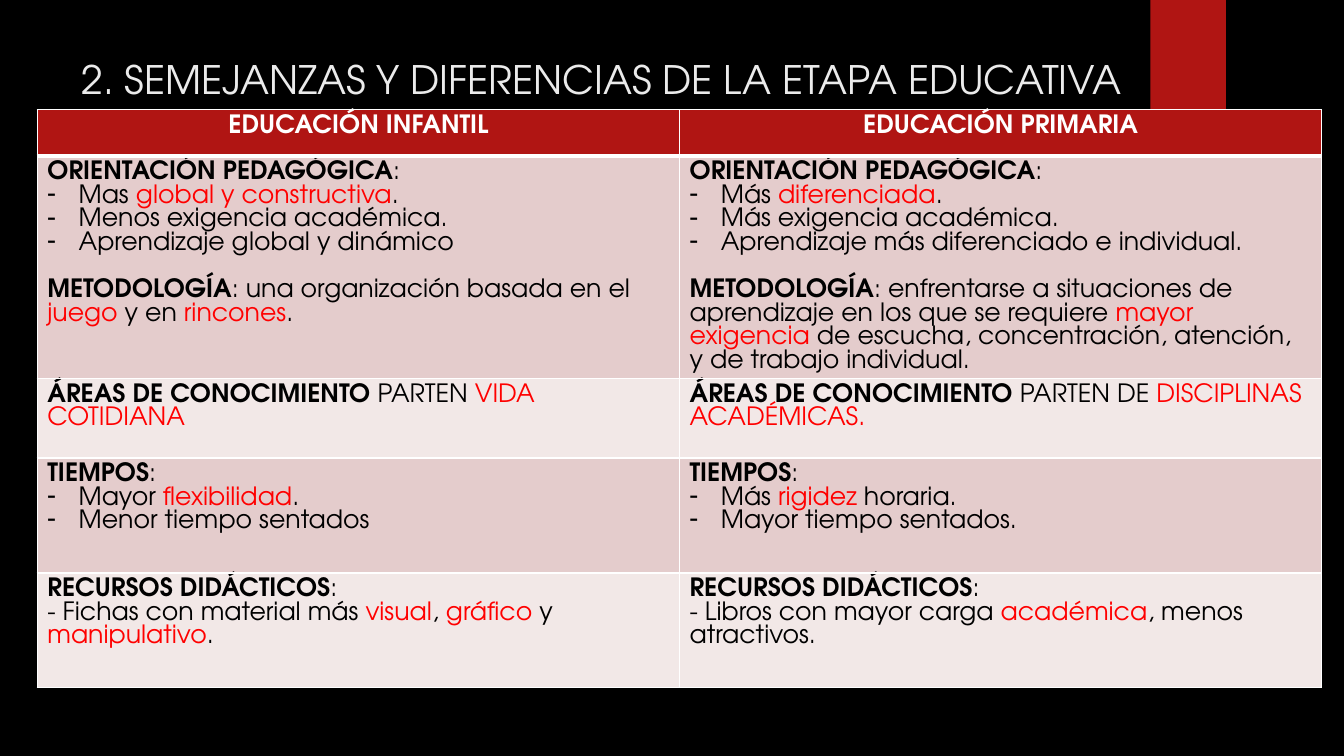
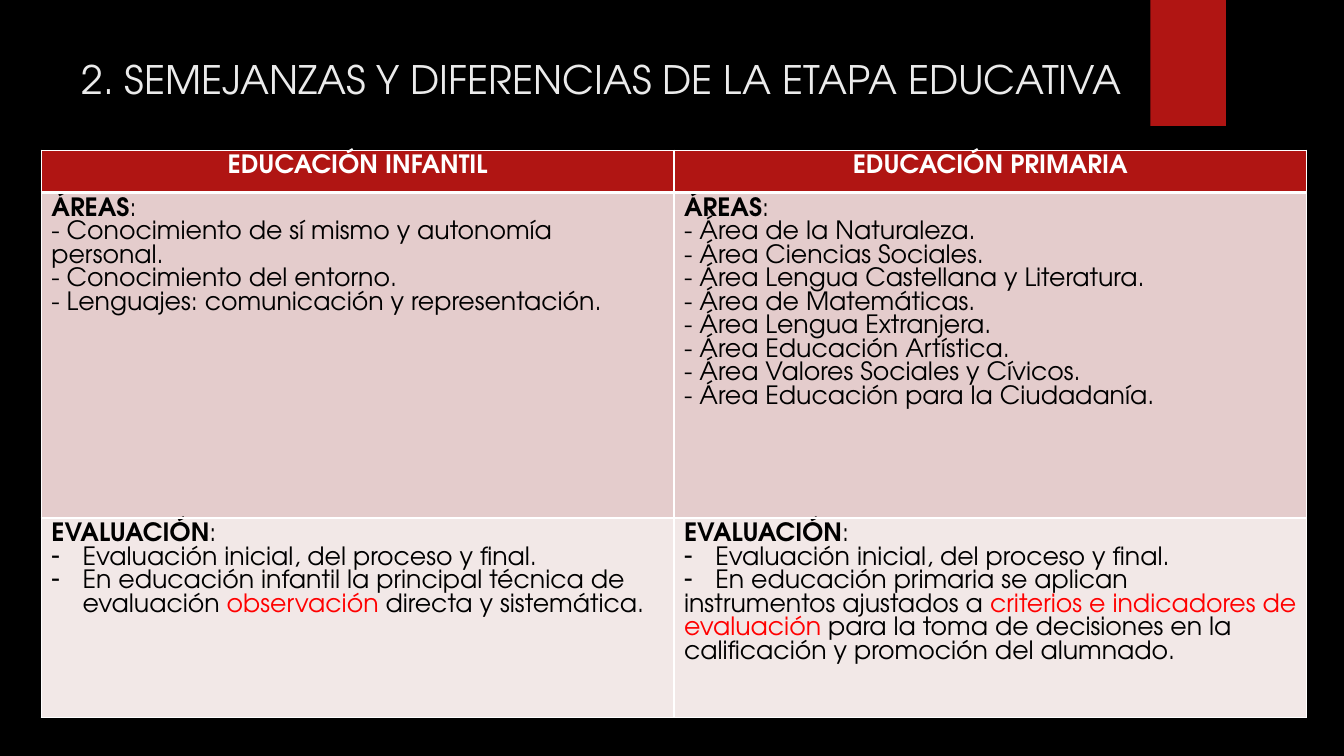
"""Build two slides comparing preschool and primary education."""
from dataclasses import dataclass

from lxml import etree
from pptx import Presentation
from pptx.dml.color import RGBColor as RGB
from pptx.enum.shapes import MSO_SHAPE as SHAPE
from pptx.enum.text import MSO_ANCHOR as ANCHOR, PP_ALIGN as ALIGN
from pptx.oxml.ns import qn
from pptx.util import Inches, Pt


@dataclass(frozen=True)
class Theme:
    """Colours, font and type sizes."""
    font: str = "TeX Gyre Adventor"
    title_size: int = 28
    body_size: int = 18
    background: RGB = RGB(0x00, 0x00, 0x00)
    title: RGB = RGB(0xEB, 0xEB, 0xEB)
    accent: RGB = RGB(0xB0, 0x15, 0x13)
    header_text: RGB = RGB(0xFF, 0xFF, 0xFF)
    text: RGB = RGB(0x00, 0x00, 0x00)
    highlight: RGB = RGB(0xFF, 0x00, 0x00)
    bands: tuple = (RGB(0xE4, 0xCC, 0xCC), RGB(0xF2, 0xE8, 0xE7))
    border: str = "FFFFFF"


THEME = Theme()
TITLE = "2. SEMEJANZAS Y DIFERENCIAS DE LA ETAPA EDUCATIVA"
STAGES = ("EDUCACIÓN INFANTIL", "EDUCACIÓN PRIMARIA")
BOLD, RED, BULLET, GAP = "*", "~", ">", "^"

COMPARISONS = [
    {
        "origin": (0.37, 1.09), "width": 12.74,
        "heights": (0.46, 2.2, 0.79, 1.14, 1.14),
        "rows": [
            ((
                "*ORIENTACIÓN PEDAGÓGICA|:",
                ">Mas |~global y constructiva|.",
                ">Menos exigencia académica.",
                ">Aprendizaje global y dinámico",
                "^*METODOLOGÍA|: una organización basada en el",
                "~juego| y en |~rincones|.",
            ), (
                "*ORIENTACIÓN PEDAGÓGICA|:",
                ">Más |~diferenciada|.",
                ">Más exigencia académica.",
                ">Aprendizaje más diferenciado e individual.",
                "^*METODOLOGÍA|: enfrentarse a situaciones de aprendizaje en los "
                "que se requiere |~mayor exigencia| de escucha, concentración, "
                "atención, y de trabajo individual.",
            )),
            (("*ÁREAS DE CONOCIMIENTO |PARTEN |~VIDA COTIDIANA",),
             ("*ÁREAS DE CONOCIMIENTO |PARTEN DE |~DISCIPLINAS ACADÉMICAS.",)),
            (("*TIEMPOS|:", ">Mayor |~flexibilidad|.", ">Menor tiempo sentados"),
             ("*TIEMPOS|:", ">Más |~rigidez| horaria.", ">Mayor tiempo sentados.")),
            ((
                "*RECURSOS DIDÁCTICOS|:",
                "- Fichas con material más |~visual|, |~gráfico| y |~manipulativo|.",
            ), (
                "*RECURSOS DIDÁCTICOS|:",
                "- Libros con mayor carga |~académica|, menos atractivos.",
            )),
        ],
    },
    {
        "origin": (0.41, 1.49), "width": 12.55,
        "heights": (0.42, 3.23, 1.98),
        "rows": [
            ((
                "*ÁREAS|:",
                "- Conocimiento de sí mismo y autonomía personal.",
                "- Conocimiento del entorno.",
                "- Lenguajes: comunicación y representación.",
            ), (
                "*ÁREAS|:",
                "- Área de la Naturaleza.",
                "- Área Ciencias Sociales.",
                "- Área Lengua Castellana y Literatura.",
                "- Área de Matemáticas.",
                "- Área Lengua Extranjera.",
                "- Área Educación Artística.",
                "- Área Valores Sociales y Cívicos.",
                "- Área Educación para la Ciudadanía.",
            )),
            ((
                "*EVALUACIÓN|:",
                ">Evaluación inicial, del proceso y final.",
                ">En educación infantil la principal técnica de evaluación "
                "|~observación| directa y sistemática.",
            ), (
                "*EVALUACIÓN|:",
                ">Evaluación inicial, del proceso y final.",
                ">En educación primaria se aplican",
                "instrumentos ajustados a |~criterios e indicadores de evaluación"
                "| para la toma de decisiones en la calificación y promoción "
                "del alumnado.",
            )),
        ],
    },
]


def style_run(run, size, color, bold=False):
    """Apply the theme font with the given size, colour and weight."""
    run.font.name = THEME.font
    run.font.size = Pt(size)
    run.font.color.rgb = color
    run.font.bold = bold


def add_bullet(paragraph):
    """Give a paragraph a hanging dash."""
    properties = paragraph._p.get_or_add_pPr()
    properties.set("marL", str(Inches(0.31)))
    properties.set("indent", str(-Inches(0.31)))
    etree.SubElement(properties, qn("a:buChar")).set("char", "-")


def write_paragraph(paragraph, marked, color, bold=False):
    """Write marked text as bold, highlighted and plain runs."""
    if marked.startswith(BULLET):
        add_bullet(paragraph)
    elif marked.startswith(GAP):
        paragraph.space_before = Pt(17)
    for piece in marked.lstrip(BULLET + GAP).split("|"):
        run = paragraph.add_run()
        run.text = piece.lstrip(BOLD + RED)
        style_run(run, THEME.body_size,
                  THEME.highlight if piece.startswith(RED) else color,
                  bold or piece.startswith(BOLD))


def add_borders(cell, bottom):
    """Outline a cell in white with a bottom line of its own width."""
    properties = cell._tc.get_or_add_tcPr()
    for side, width in (("L", 1), ("R", 1), ("T", 1), ("B", bottom)):
        line = etree.SubElement(properties, qn(f"a:ln{side}"), w=str(Pt(width)))
        fill = etree.SubElement(line, qn("a:solidFill"))
        etree.SubElement(fill, qn("a:srgbClr"), val=THEME.border)


def fill_cell(cell, paragraphs, fill, is_header):
    """Format a cell and write its paragraphs."""
    add_borders(cell, 3 if is_header else 1)
    cell.fill.solid()
    cell.fill.fore_color.rgb = fill
    color = THEME.header_text if is_header else THEME.text
    for index, marked in enumerate(paragraphs):
        frame = cell.text_frame
        paragraph = frame.add_paragraph() if index else frame.paragraphs[0]
        write_paragraph(paragraph, marked, color, is_header)
        if is_header:
            paragraph.alignment = ALIGN.CENTER


def add_comparison(slide, comparison):
    """Add the two-column table of one slide."""
    rows = [tuple((stage,) for stage in STAGES)] + comparison["rows"]
    heights = comparison["heights"]
    left, top = comparison["origin"]
    table = slide.shapes.add_table(
        len(rows), len(STAGES), Inches(left), Inches(top),
        Inches(comparison["width"]), Inches(sum(heights))).table
    for index, (row, height) in enumerate(zip(rows, heights)):
        table.rows[index].height = Inches(height)
        fill = THEME.bands[(index - 1) % 2] if index else THEME.accent
        for column, paragraphs in enumerate(row):
            fill_cell(table.cell(index, column), paragraphs, fill, index == 0)


def add_title(slide):
    """Place and format the slide title."""
    title = slide.shapes.title
    title.left, title.top = Inches(0.71), Inches(0.5)
    title.width, title.height = Inches(11.75), Inches(1.53)
    frame = title.text_frame
    frame.text = TITLE
    frame.word_wrap = True
    frame.vertical_anchor = ANCHOR.TOP
    frame.paragraphs[0].alignment = ALIGN.LEFT
    style_run(frame.paragraphs[0].runs[0], THEME.title_size, THEME.title)


def add_ribbon(slide):
    """Add the red ribbon at the top and return it."""
    ribbon = slide.shapes.add_shape(
        SHAPE.RECTANGLE, Inches(11.41), 0, Inches(0.75), Inches(1.25))
    ribbon.shadow.inherit = False
    ribbon.fill.solid()
    ribbon.fill.fore_color.rgb = THEME.accent
    ribbon.line.fill.background()
    return ribbon


def main():
    """Build and save the presentation."""
    deck = Presentation()
    deck.slide_width, deck.slide_height = Inches(13.33), Inches(7.5)
    backdrop = deck.slide_master.background.fill
    backdrop.solid()
    backdrop.fore_color.rgb = THEME.background
    layout = deck.slide_layouts.get_by_name("Title Only")
    slides = [deck.slides.add_slide(layout) for _ in COMPARISONS]
    layout.shapes.element.append(add_ribbon(slides[0]).element)
    for slide, comparison in zip(slides, COMPARISONS):
        add_title(slide)
        add_comparison(slide, comparison)
    deck.save("out.pptx")


if __name__ == "__main__":
    main()
